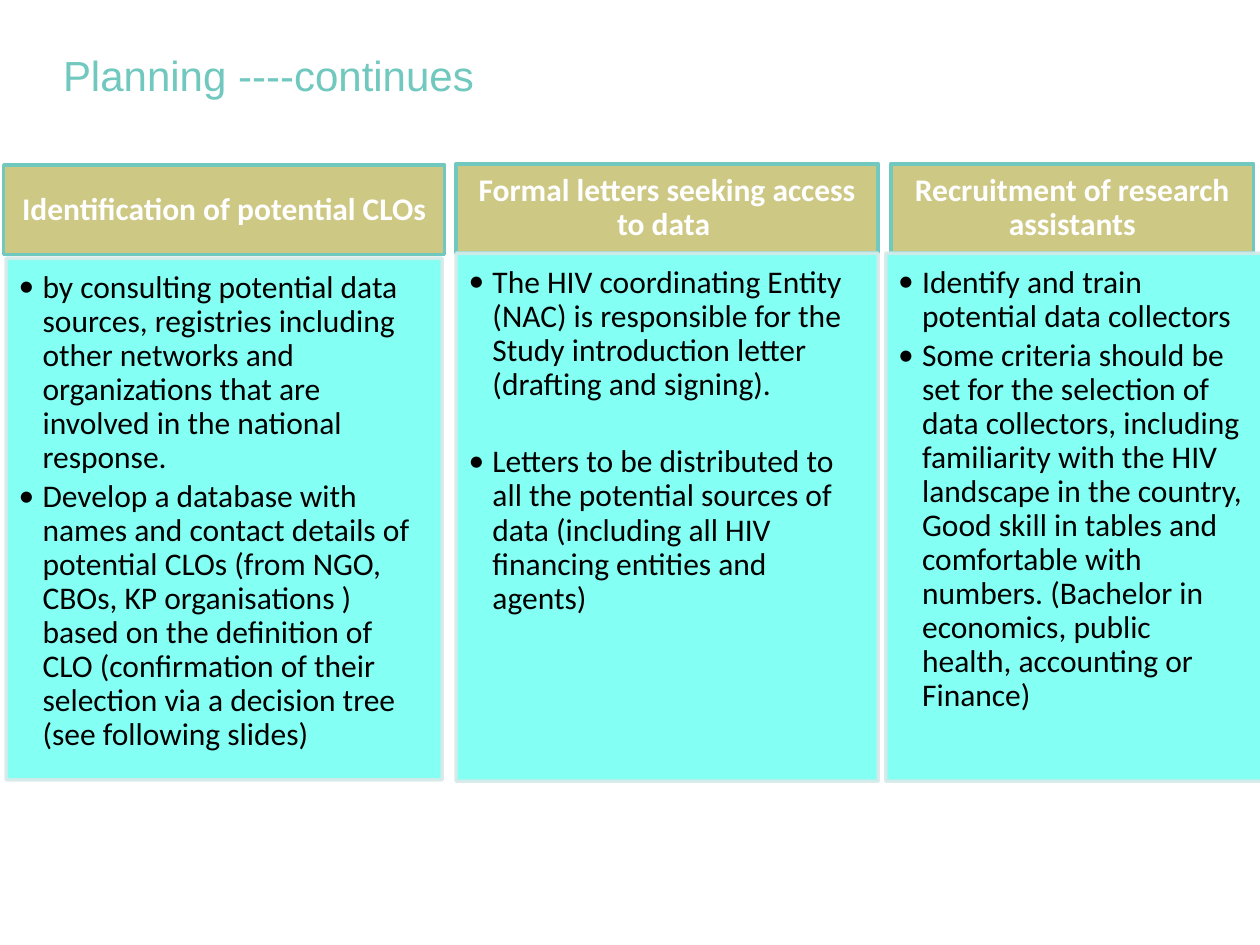
import pptx
import pptx.util
import pptx.dml.color
import pptx.enum.shapes
import pptx.enum.text
import pptx.oxml
import pptx.oxml.ns

Inches = pptx.util.Inches
Pt = pptx.util.Pt
RGBColor = pptx.dml.color.RGBColor
ALIGN = pptx.enum.text.PP_ALIGN
ANCHOR = pptx.enum.text.MSO_ANCHOR

TEAL = RGBColor(0x70, 0xC8, 0xBE)
KHAKI = RGBColor(0xCD, 0xC8, 0x84)
AQUA = RGBColor(0x77, 0xFF, 0xF3)
PALE_TEAL = RGBColor(0xD5, 0xEB, 0xE8)
WHITE = RGBColor(0xFF, 0xFF, 0xFF)
BLACK = RGBColor(0x00, 0x00, 0x00)

TITLE_FONT = {"name": "Arial", "size": Pt(24), "bold": False}
HEADER_FONT = {"name": "Calibri", "size": Pt(18), "bold": True}
LIST_FONT = {"name": "Calibri", "size": Pt(18), "bold": False}
HEADER_FRAME = {
    "word_wrap": True, "vertical_anchor": ANCHOR.MIDDLE,
    "margin_left": Inches(0.14), "margin_right": Inches(0.14),
    "margin_top": Inches(0.08), "margin_bottom": Inches(0.08),
}
LIST_FRAME = {
    "word_wrap": True, "vertical_anchor": ANCHOR.TOP,
    "margin_left": Inches(0.1), "margin_right": Inches(0.14),
    "margin_top": Inches(0.1), "margin_bottom": Inches(0.16),
}
HEADER_PARAGRAPH = {"alignment": ALIGN.CENTER, "line_spacing": 0.9}
LIST_PARAGRAPH = {"alignment": ALIGN.LEFT, "line_spacing": 0.9, "space_after": Pt(3)}

COLUMNS = [
    {
        "header": "Identification of potential CLOs",
        "header_box": (0.03, 1.31, 3.5, 0.71),
        "list_box": (0.05, 2.05, 3.46, 4.14),
        "item_gap": 0,
        "items": [
            "by consulting potential data sources, registries including other networks "
            "and organizations that are involved in the national response.",
            "Develop a database with names and contact details of potential CLOs (from "
            "NGO, CBOs, KP organisations ) based on the definition of CLO (confirmation "
            "of their selection via a decision tree (see following slides)",
        ],
    },
    {
        "header": "Formal letters seeking access to data ",
        "header_box": (3.62, 1.3, 3.35, 0.71),
        "list_box": (3.62, 2.01, 3.35, 4.19),
        "item_gap": 22,
        "items": [
            "The HIV coordinating Entity (NAC) is responsible for the Study introduction "
            "letter (drafting and signing).",
            "Letters to be distributed to all the potential sources of data (including "
            "all HIV financing entities and agents)",
        ],
    },
    {
        "header": "Recruitment of research assistants",
        "header_box": (7.07, 1.3, 2.88, 0.71),
        "list_box": (7.03, 2.01, 2.99, 4.19),
        "item_gap": 0,
        "items": [
            "Identify and train potential data collectors",
            "Some criteria should be set for the selection of data collectors, including "
            "familiarity with the HIV landscape in the country, Good skill in tables and "
            "comfortable with numbers. (Bachelor in economics, public health, accounting "
            "or Finance)",
        ],
    },
]


def apply_format(target, values):
    for name, value in values.items():
        setattr(target, name, value)


def format_font(paragraph, values, color):
    apply_format(paragraph.font, values)
    paragraph.font.color.rgb = color


def add_child(parent, tag, **attributes):
    child = pptx.oxml.parse_xml(f"<a:{tag} {pptx.oxml.ns.nsdecls('a')}/>")
    for name, value in attributes.items():
        child.set(name, value)
    parent.append(child)


def add_box(slide, box, fill_color, line_color):
    shape = slide.shapes.add_shape(
        pptx.enum.shapes.MSO_SHAPE.RECTANGLE, *map(Inches, box))
    shape.shadow.inherit = False
    shape.fill.solid()
    shape.fill.fore_color.rgb = fill_color
    shape.line.color.rgb = line_color
    shape.line.width = Pt(2)
    return shape


def make_translucent(shape, percent):
    for color in shape._element.spPr.iter(pptx.oxml.ns.qn("a:srgbClr")):
        add_child(color, "alpha", val=str(percent * 1000))


def add_bullet(paragraph):
    properties = paragraph._p.get_or_add_pPr()
    indent = Inches(0.19)
    properties.set("marL", str(indent))
    properties.set("indent", str(-indent))
    add_child(properties, "buFont", typeface="Calibri")
    add_child(properties, "buChar", char="•")


def add_title(slide, text):
    title = slide.shapes.title
    box = {"left": 0.4, "top": 0.34, "width": 8.5, "height": 0.5}
    apply_format(title, {name: Inches(value) for name, value in box.items()})
    title.text_frame.text = text
    paragraph = title.text_frame.paragraphs[0]
    paragraph.alignment = ALIGN.LEFT
    format_font(paragraph, TITLE_FONT, TEAL)


def add_header(slide, text, box):
    shape = add_box(slide, box, KHAKI, TEAL)
    apply_format(shape.text_frame, HEADER_FRAME)
    paragraph = shape.text_frame.paragraphs[0]
    paragraph.text = text
    apply_format(paragraph, HEADER_PARAGRAPH)
    format_font(paragraph, HEADER_FONT, WHITE)


def add_list(slide, items, box, item_gap):
    shape = add_box(slide, box, AQUA, PALE_TEAL)
    make_translucent(shape, 90)
    frame = shape.text_frame
    apply_format(frame, LIST_FRAME)
    frame.text = "\n".join(items)
    for index, paragraph in enumerate(frame.paragraphs):
        add_bullet(paragraph)
        apply_format(paragraph, LIST_PARAGRAPH)
        paragraph.space_before = Pt(item_gap if index else 0)
        format_font(paragraph, LIST_FONT, BLACK)


def main():
    presentation = pptx.Presentation()
    apply_format(presentation, {"slide_width": Inches(10), "slide_height": Inches(7.5)})
    slide = presentation.slides.add_slide(
        presentation.slide_layouts.get_by_name("Title Only"))
    add_title(slide, "Planning ----continues")
    for column in COLUMNS:
        add_header(slide, column["header"], column["header_box"])
        add_list(slide, column["items"], column["list_box"], column["item_gap"])
    presentation.save("out.pptx")


if __name__ == "__main__":
    main()
